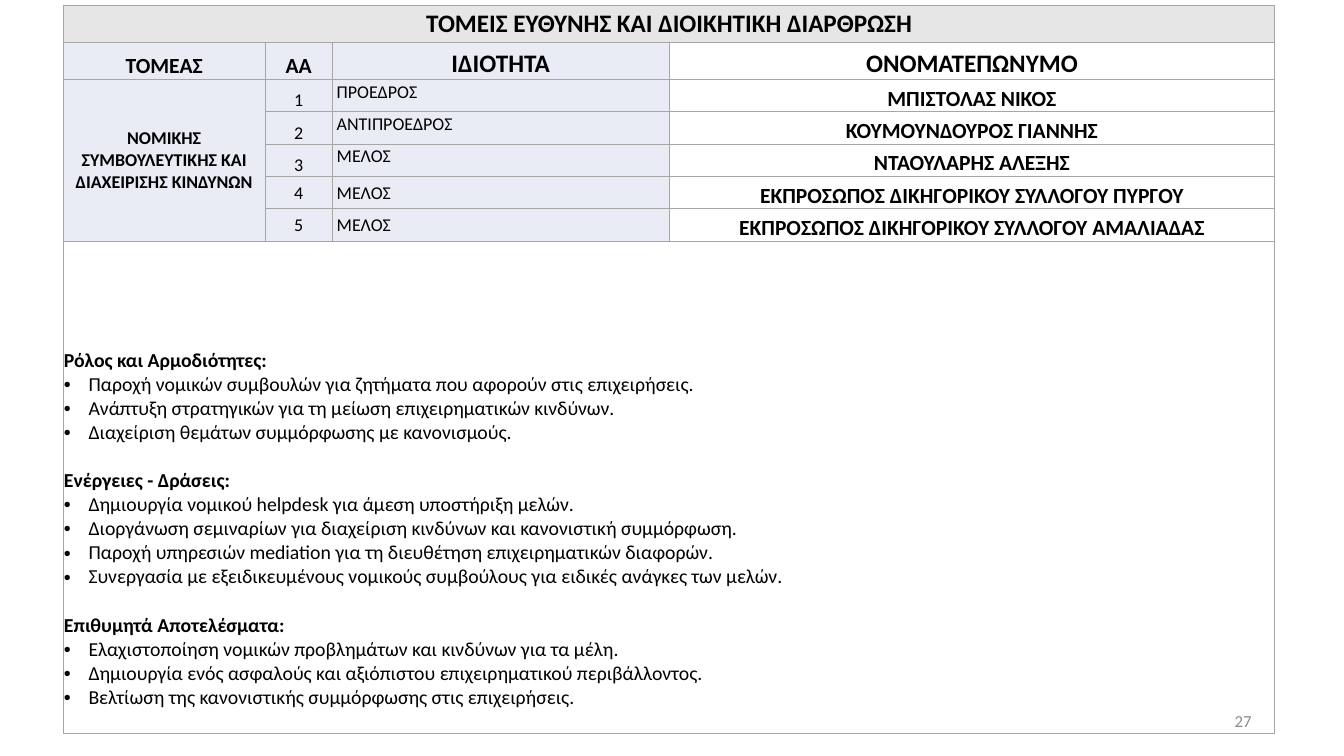
from lxml.etree import SubElement as Sub
from pptx import Presentation
from pptx.dml.color import RGBColor
from pptx.enum.text import MSO_ANCHOR as Anchor, PP_ALIGN as Align
from pptx.oxml.ns import qn
from pptx.util import Inches, Pt

WIDTHS = [3.12, 1.04, 5.21, 9.37]
HEIGHTS = [0.57, 0.58] + [0.5] * 5 + [7.61]
HEADS = [("ΤΟΜΕΑΣ", 24), ("ΑΑ", 24), ("ΙΔΙΟΤΗΤΑ", 28), ("ΟΝΟΜΑΤΕΠΩΝΥΜΟ", 28)]
MEMBERS = [
    ("ΠΡΟΕΔΡΟΣ", "ΜΠΙΣΤΟΛΑΣ ΝΙΚΟΣ"),
    ("ΑΝΤΙΠΡΟΕΔΡΟΣ", "ΚΟΥΜΟΥΝΔΟΥΡΟΣ ΓΙΑΝΝΗΣ"),
    ("ΜΕΛΟΣ", "ΝΤΑΟΥΛΑΡΗΣ ΑΛΕΞΗΣ"),
    ("ΜΕΛΟΣ", "ΕΚΠΡΟΣΩΠΟΣ ΔΙΚΗΓΟΡΙΚΟΥ ΣΥΛΛΟΓΟΥ ΠΥΡΓΟΥ"),
    ("ΜΕΛΟΣ", "ΕΚΠΡΟΣΩΠΟΣ ΔΙΚΗΓΟΡΙΚΟΥ ΣΥΛΛΟΓΟΥ ΑΜΑΛΙΑΔΑΣ"),
]
DUTIES = [
    ("Ρόλος και Αρμοδιότητες:", [
        "Παροχή νομικών συμβουλών για ζητήματα που αφορούν στις επιχειρήσεις.",
        "Ανάπτυξη στρατηγικών για τη μείωση επιχειρηματικών κινδύνων.",
        "Διαχείριση θεμάτων συμμόρφωσης με κανονισμούς.",
    ]),
    ("Ενέργειες - Δράσεις:", [
        "Δημιουργία νομικού helpdesk για άμεση υποστήριξη μελών.",
        "Διοργάνωση σεμιναρίων για διαχείριση κινδύνων και κανονιστική συμμόρφωση.",
        "Παροχή υπηρεσιών mediation για τη διευθέτηση επιχειρηματικών διαφορών.",
        "Συνεργασία με εξειδικευμένους νομικούς συμβούλους για ειδικές ανάγκες των μελών.",
    ]),
    ("Επιθυμητά Αποτελέσματα:", [
        "Ελαχιστοποίηση νομικών προβλημάτων και κινδύνων για τα μέλη.",
        "Δημιουργία ενός ασφαλούς και αξιόπιστου επιχειρηματικού περιβάλλοντος.",
        "Βελτίωση της κανονιστικής συμμόρφωσης στις επιχειρήσεις.",
    ]),
]


def color(code):
    return RGBColor.from_string(code)


def add_run(para, text, size, bold=False, ink="000000"):
    run = para.add_run()
    run.text = text
    font = run.font
    font.name, font.size, font.bold = "Calibri", Pt(size), bold
    font.color.rgb = color(ink)


def set_cell(cell, fill):
    props = cell._tc.get_or_add_tcPr()
    for side in ("lnL", "lnR", "lnT", "lnB"):
        line = Sub(props, qn(f"a:{side}"), w=str(Pt(1)))
        Sub(Sub(line, qn("a:solidFill")), qn("a:srgbClr"), val="A6A6A6")
    cell.fill.solid()
    cell.fill.fore_color.rgb = color(fill)
    cell.margin_left = cell.margin_right = cell.margin_top = Inches(0.01)
    cell.margin_bottom = 0


def put(cell, text, size, bold=True, anchor=Anchor.BOTTOM, align=Align.CENTER):
    cell.vertical_anchor = anchor
    para = cell.text_frame.paragraphs[0]
    para.alignment = align
    add_run(para, text, size, bold)
    return para


def put_role(cell, text, anchor):
    para = put(cell, text, 20, False, anchor, Align.LEFT)
    para.line_spacing, para.space_after = 1.07, Pt(8)
    cell.margin_left = cell.margin_right = Inches(0.07)
    cell.margin_top = 0


def put_duties(cell):
    cell.vertical_anchor = Anchor.BOTTOM
    cell.margin_bottom = Inches(0.37)
    frame = cell.text_frame
    for num, (head, items) in enumerate(DUTIES):
        para = frame.add_paragraph() if num else frame.paragraphs[0]
        if num:
            para.space_before = Pt(26.8)
        add_run(para, head, 22, True)
        for item in items:
            para = frame.add_paragraph()
            props = para._p.get_or_add_pPr()
            props.set("marL", str(Inches(0.38)))
            props.set("indent", str(-Inches(0.38)))
            Sub(props, qn("a:buFont"), typeface="Arial")
            Sub(props, qn("a:buChar"), char="•")
            add_run(para, item, 22)


def add_board(slide, left, top, width, height):
    table = slide.shapes.add_table(
        len(HEIGHTS), len(WIDTHS), Inches(left), Inches(top),
        Inches(width), Inches(height)).table
    table.first_row = table.horz_banding = False
    for col, size in zip(table.columns, WIDTHS):
        col.width = Inches(size)
    last = len(HEIGHTS) - 1
    for r, size in enumerate(HEIGHTS):
        table.rows[r].height = Inches(size)
        for c in range(len(WIDTHS)):
            white = r == last or c == 3
            fill = "E7E6E6" if r == 0 else "FFFFFF" if white else "E9EBF5"
            set_cell(table.cell(r, c), fill)
    for r in (0, last):
        table.cell(r, 0).merge(table.cell(r, 3))
    table.cell(2, 0).merge(table.cell(last - 1, 0))

    put(table.cell(0, 0), "ΤΟΜΕΙΣ ΕΥΘΥΝΗΣ ΚΑΙ ΔΙΟΙΚΗΤΙΚΉ ΔΙΑΡΘΡΩΣΗ", 28,
        anchor=Anchor.MIDDLE)
    for c, (text, size) in enumerate(HEADS):
        put(table.cell(1, c), text, size)
    put(table.cell(2, 0), "ΝΟΜΙΚΗΣ ΣΥΜΒΟΥΛΕΥΤΙΚΗΣ ΚΑΙ ΔΙΑΧΕΙΡΙΣΗΣ ΚΙΝΔΥΝΩΝ", 20,
        anchor=Anchor.MIDDLE)
    for num, (role, name) in enumerate(MEMBERS, 1):
        r = num + 1
        mid = num > 3
        put(table.cell(r, 1), str(num), 20, False,
            Anchor.MIDDLE if mid else Anchor.BOTTOM)
        put_role(table.cell(r, 2), role, Anchor.MIDDLE if mid else Anchor.TOP)
        put(table.cell(r, 3), name, 24)
    put_duties(table.cell(last, 0))


def add_number(slide, left, top, width, height):
    box = slide.shapes.add_textbox(
        Inches(left), Inches(top), Inches(width), Inches(height))
    frame = box.text_frame
    frame.word_wrap = True
    frame.vertical_anchor = Anchor.MIDDLE
    frame.margin_left = frame.margin_right = 0
    frame.margin_top = frame.margin_bottom = 0
    para = frame.paragraphs[0]
    para.alignment = Align.RIGHT
    add_run(para, "27", 18.7, ink="8C8C8C")


def main():
    deck = Presentation()
    deck.slide_width, deck.slide_height = Inches(20.79), Inches(11.69)
    slide = deck.slides.add_slide(deck.slide_layouts[6])
    add_board(slide, 0.98, 0.08, sum(WIDTHS), sum(HEIGHTS))
    add_number(slide, 14.68, 10.84, 4.68, 0.62)
    deck.save("out.pptx")


if __name__ == "__main__":
    main()
